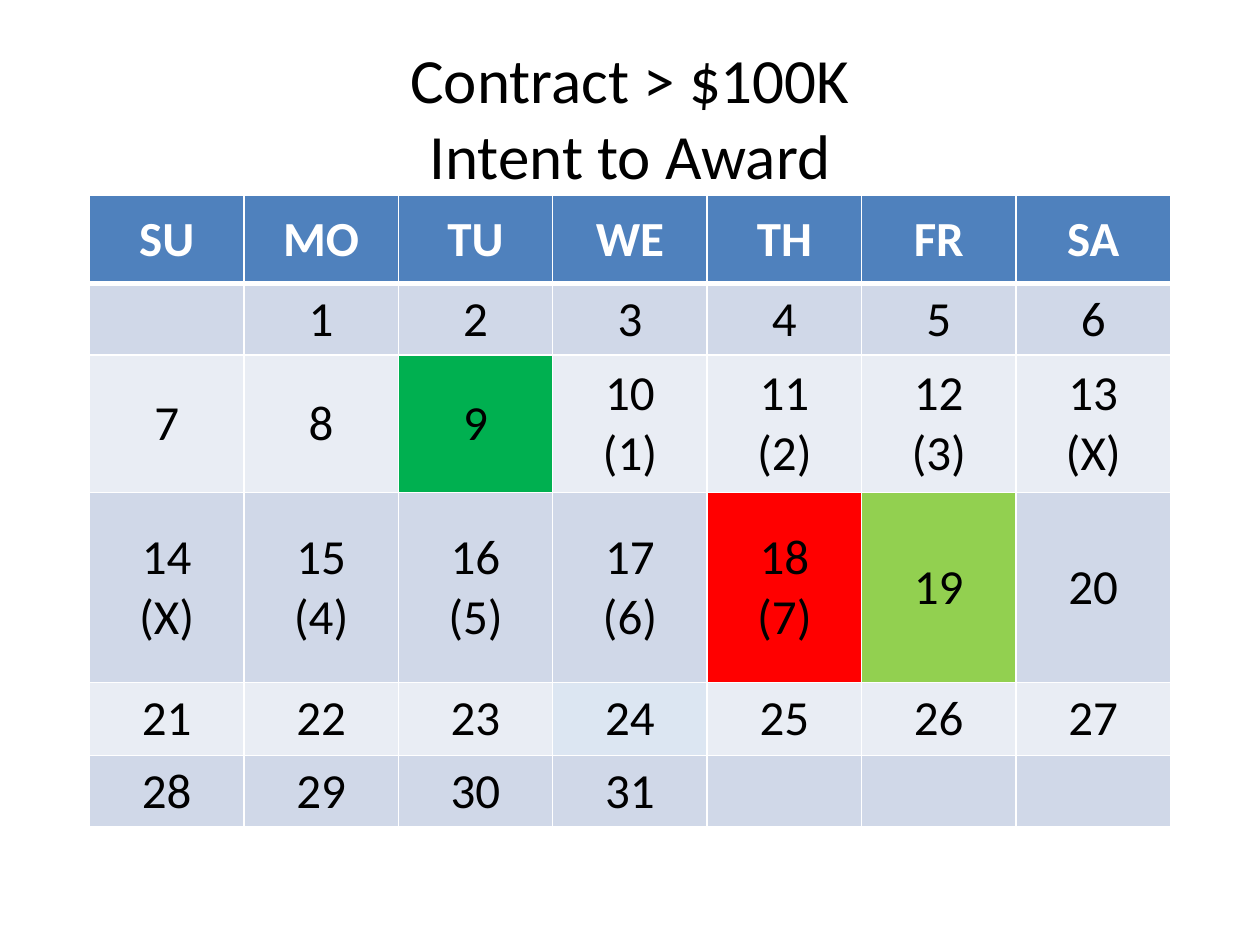
from lxml import etree
from pptx import Presentation
from pptx.dml.color import RGBColor
from pptx.enum.text import MSO_ANCHOR, PP_ALIGN
from pptx.oxml.ns import qn
from pptx.util import Inches, Pt

DAYS = ["SU", "MO", "TU", "WE", "TH", "FR", "SA"]
ROW_HEIGHTS = [0.7, 0.5, 1.09, 1.51, 0.58, 0.2]
LAST_DAY = 31
COUNTS = dict(zip(range(10, 19), "123XX4567"))
HIGHLIGHTS = {9: "00B050", 18: "FF0000", 19: "92D050", 24: "DCE6F2"}
HEADER_FILL = "4F81BD"
BAND_FILLS = ["E9EDF4", "D0D8E8"]


def color(value):
    return RGBColor.from_string(value)


def write(tf, lines, size, ink, bold=False):
    tf.text = "\n".join(lines)
    for p in tf.paragraphs:
        p.alignment = PP_ALIGN.CENTER
        for r in p.runs:
            values = {"name": "Calibri", "size": Pt(size), "bold": bold}
            for key, value in values.items():
                setattr(r.font, key, value)
            r.font.color.rgb = color(ink)


def set_borders(cell, widths):
    tcPr = cell._tc.get_or_add_tcPr()
    for side, width in widths.items():
        ln = etree.SubElement(tcPr, qn(f"a:ln{side}"), w=str(Pt(width)))
        fill = etree.SubElement(ln, qn("a:solidFill"))
        etree.SubElement(fill, qn("a:srgbClr"), val="FFFFFF")


def style_cell(cell, fill, top=1, bottom=1):
    set_borders(cell, {"L": 1, "R": 1, "T": top, "B": bottom})
    cell.fill.solid()
    cell.fill.fore_color.rgb = color(fill)
    cell.vertical_anchor = MSO_ANCHOR.MIDDLE


def add_title(s, x, y, w, h):
    tf = s.shapes.add_textbox(Inches(x), Inches(y), Inches(w), Inches(h)).text_frame
    tf.word_wrap = True
    tf.vertical_anchor = MSO_ANCHOR.MIDDLE
    write(tf, ["Contract > $100K\vIntent to Award"], 36, "000000")


def add_calendar(s, x, y, w, h):
    table = s.shapes.add_table(
        len(ROW_HEIGHTS), len(DAYS), Inches(x), Inches(y), Inches(w), Inches(h)
    ).table
    for row, height in zip(table.rows, ROW_HEIGHTS):
        row.height = Inches(height)
    for col, name in enumerate(DAYS):
        cell = table.cell(0, col)
        style_cell(cell, HEADER_FILL, bottom=3)
        write(cell.text_frame, [name], 28, "FFFFFF", True)
        for row in range(1, len(ROW_HEIGHTS)):
            cell = table.cell(row, col)
            day = (row - 1) * len(DAYS) + col
            fill = HIGHLIGHTS.get(day, BAND_FILLS[row % 2])
            style_cell(cell, fill, top=3 if row == 1 else 1)
            if 1 <= day <= LAST_DAY:
                lines = [str(day)]
                if day in COUNTS:
                    lines.append(f"({COUNTS[day]})")
                write(cell.text_frame, lines, 28, "000000")


def main():
    prs = Presentation()
    prs.slide_width, prs.slide_height = Inches(10), Inches(7.5)
    s = prs.slides.add_slide(prs.slide_layouts[6])
    add_title(s, 0.5, 0.3, 9, 1.25)
    add_calendar(s, 0.71, 1.55, 8.58, 5.02)
    prs.save("out.pptx")


if __name__ == "__main__":
    main()
